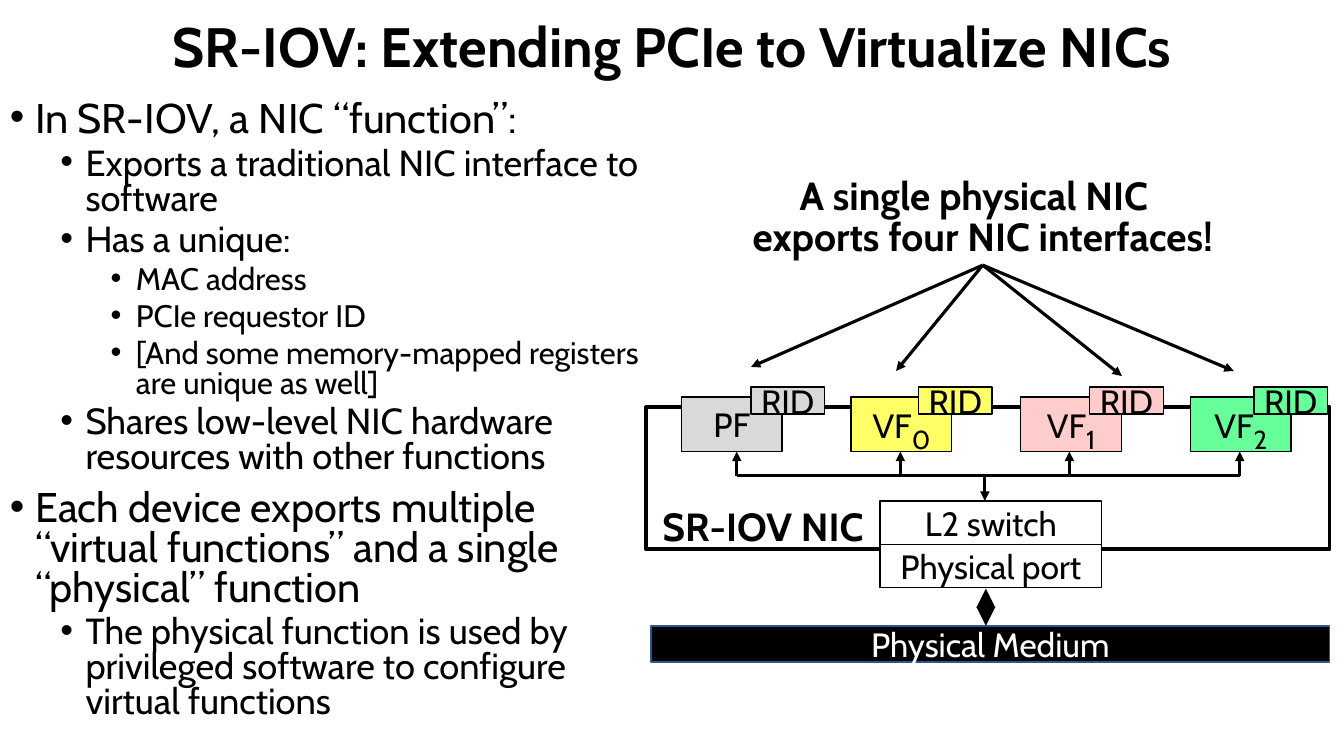
from lxml import etree
from pptx import Presentation
from pptx.dml.color import RGBColor
from pptx.enum.shapes import MSO_CONNECTOR, MSO_SHAPE
from pptx.enum.text import MSO_ANCHOR, PP_ALIGN
from pptx.oxml.ns import qn
from pptx.util import Pt

RECT = MSO_SHAPE.RECTANGLE
STRAIGHT = MSO_CONNECTOR.STRAIGHT
MIDDLE, TOP = MSO_ANCHOR.MIDDLE, MSO_ANCHOR.TOP
CENTER, LEFT = PP_ALIGN.CENTER, PP_ALIGN.LEFT
FONT = "Cabin"
BLACK, WHITE = "000000", "FFFFFF"
TITLE_ONLY = 5

# Per outline level: text size, space before
LEVELS = [(29.6, 10), (25.9, 5), (22.2, 5)]
OUTLINE = [
    (0, "In SR-IOV, a NIC “function”:"),
    (1, "Exports a traditional NIC interface to software"),
    (1, "Has a unique:"),
    (2, "MAC address"),
    (2, "PCIe requestor ID"),
    (2, "[And some memory-mapped registers are unique as well]"),
    (1, "Shares low-level NIC hardware resources with other functions"),
    (0, "Each device exports multiple “virtual functions” and a single “physical” function"),
    (1, "The physical function is used by privileged software to configure virtual functions"),
]

# Name, subscript, colour, RID offset, bus offset, callout arrow tip (x, y)
FUNCTIONS = [
    ("PF", "", "D9D9D9", 49.7, 39.6, (86.4, 143.3)),
    ("VF", "0", "FFFF66", 48.2, 35.2, (190.1, 146.2)),
    ("VF", "1", "FFCCCC", 49.2, 34.8, (351.4, 149.8)),
    ("VF", "2", "66FF99", 45.4, 35.3, (431.3, 146.2)),
]


def color(hex_code):
    return RGBColor.from_string(hex_code)


def add_run(paragraph, text, size, bold=False, hue=BLACK, baseline=None):
    run = paragraph.add_run()
    run.text = text
    run.font.name, run.font.size, run.font.bold = FONT, Pt(size), bold
    run.font.color.rgb = color(hue)
    if baseline:
        run.font._element.set("baseline", str(baseline))


def add_label(slide, x, y, width, height, text):
    label = slide.shapes.add_textbox(Pt(x), Pt(y), Pt(width), Pt(height))
    label.text_frame.word_wrap = True
    paragraph = label.text_frame.paragraphs[0]
    paragraph.alignment = CENTER
    add_run(paragraph, text, 28, bold=True)


def add_block(slide, x, y, width, height, fill=WHITE, text="", subscript="",
              line=BLACK, weight=1, hue=BLACK):
    block = slide.shapes.add_shape(RECT, Pt(x), Pt(y), Pt(width), Pt(height))
    block.shadow.inherit = False
    block.fill.solid()
    block.fill.fore_color.rgb = color(fill)
    block.line.color.rgb = color(line)
    block.line.width = Pt(weight)
    frame = block.text_frame
    frame.word_wrap, frame.vertical_anchor = True, MIDDLE
    frame.margin_left = frame.margin_right = 0
    paragraph = frame.paragraphs[0]
    paragraph.alignment = CENTER
    if text:
        add_run(paragraph, text, 24, hue=hue)
    if subscript:
        add_run(paragraph, subscript, 32, baseline=-25000)


def add_line(slide, start, end, weight=2.25, arrows=("tailEnd",)):
    line = slide.shapes.add_connector(STRAIGHT, *map(Pt, start + end))
    line.line.color.rgb = color(BLACK)
    line.line.width = Pt(weight)
    for arrow in arrows:
        etree.SubElement(line.line._get_or_add_ln(), qn("a:" + arrow), type="triangle")
    etree.SubElement(line._element.spPr, qn("a:effectLst"))


def build_title(slide, x, y, width, height):
    title = slide.shapes.title
    title.left, title.top, title.width, title.height = map(Pt, (x, y, width, height))
    title.text_frame.word_wrap = True
    title.text_frame.vertical_anchor = MIDDLE
    paragraph = title.text_frame.paragraphs[0]
    paragraph.alignment, paragraph.line_spacing = CENTER, 0.9
    add_run(paragraph, "SR-IOV: Extending PCIe to Virtualize NICs", 39.6, bold=True)


def build_outline(slide, x, y, width, height):
    outline = slide.shapes.add_textbox(Pt(x), Pt(y), Pt(width), Pt(height))
    frame = outline.text_frame
    frame.word_wrap, frame.vertical_anchor = True, TOP
    for index, (level, text) in enumerate(OUTLINE):
        paragraph = frame.add_paragraph() if index else frame.paragraphs[0]
        size, gap = LEVELS[level]
        paragraph.level, paragraph.alignment = level, LEFT
        paragraph.line_spacing, paragraph.space_before = 0.8, Pt(gap)
        properties = paragraph._p.get_or_add_pPr()
        properties.set("marL", str(Pt(18 + 36 * level)))
        properties.set("indent", str(Pt(-18)))
        etree.SubElement(properties, qn("a:buFont"), typeface="Arial")
        etree.SubElement(properties, qn("a:buChar"), char="•")
        add_run(paragraph, text, size)


def build_diagram(slide, x, y):
    # Network card, its ports and the medium
    add_block(slide, x + 15.1, y + 328.3, 484.6, 25.9, BLACK, "Physical Medium",
              line="325491", hue=WHITE)
    add_block(slide, x + 11.5, y + 172.1, 488.2, 101.5, weight=2.75)
    add_label(slide, x, y + 236.2, 190, 41, "SR-IOV NIC")
    for row, part in enumerate(["L2 switch", "Physical port"]):
        add_block(slide, x + 178.6, y + 239 + 31 * row, 158.4, 31, text=part)
    add_line(slide, (x + 254.2, y + 301.7), (x + 254.2, y + 328.3), 4.5,
             ("headEnd", "tailEnd"))

    # Callout
    add_label(slide, x + 26.6, y, 437.8, 41, "A single physical NIC")
    add_label(slide, x + 43.2, y + 29.5, 417.6, 41, "exports four NIC interfaces!")

    # Functions with their requestor IDs, callout arrows and bus taps
    bus_y = y + 221
    taps = []
    for index, (name, subscript, fill, rid_dx, tap_dx, tip) in enumerate(FUNCTIONS):
        left = x + 36.7 + 121.2 * index
        add_block(slide, left, y + 164.9, 72, 38.9, fill, name, subscript)
        add_block(slide, left + rid_dx, y + 157.7, 52.6, 19.4, fill, "RID")
        add_line(slide, (x + 252, y + 70.6), (x + tip[0], y + tip[1]))
        taps.append(left + tap_dx)
        add_line(slide, (taps[-1], bus_y), (taps[-1], y + 203.8))

    # Shared bus down to the switch
    add_line(slide, (taps[0], bus_y), (taps[-1], bus_y), arrows=())
    add_line(slide, (x + 253.5, bus_y), (x + 253.5, y + 239))


def main():
    deck = Presentation()
    deck.slide_width, deck.slide_height = Pt(960), Pt(540)
    slide = deck.slides.add_slide(deck.slide_layouts[TITLE_ONLY])
    build_title(slide, 66, 6, 828, 59)
    build_outline(slide, 0, 69, 467.3, 475)
    build_diagram(slide, 450, 118.8)
    deck.save("out.pptx")


if __name__ == "__main__":
    main()
